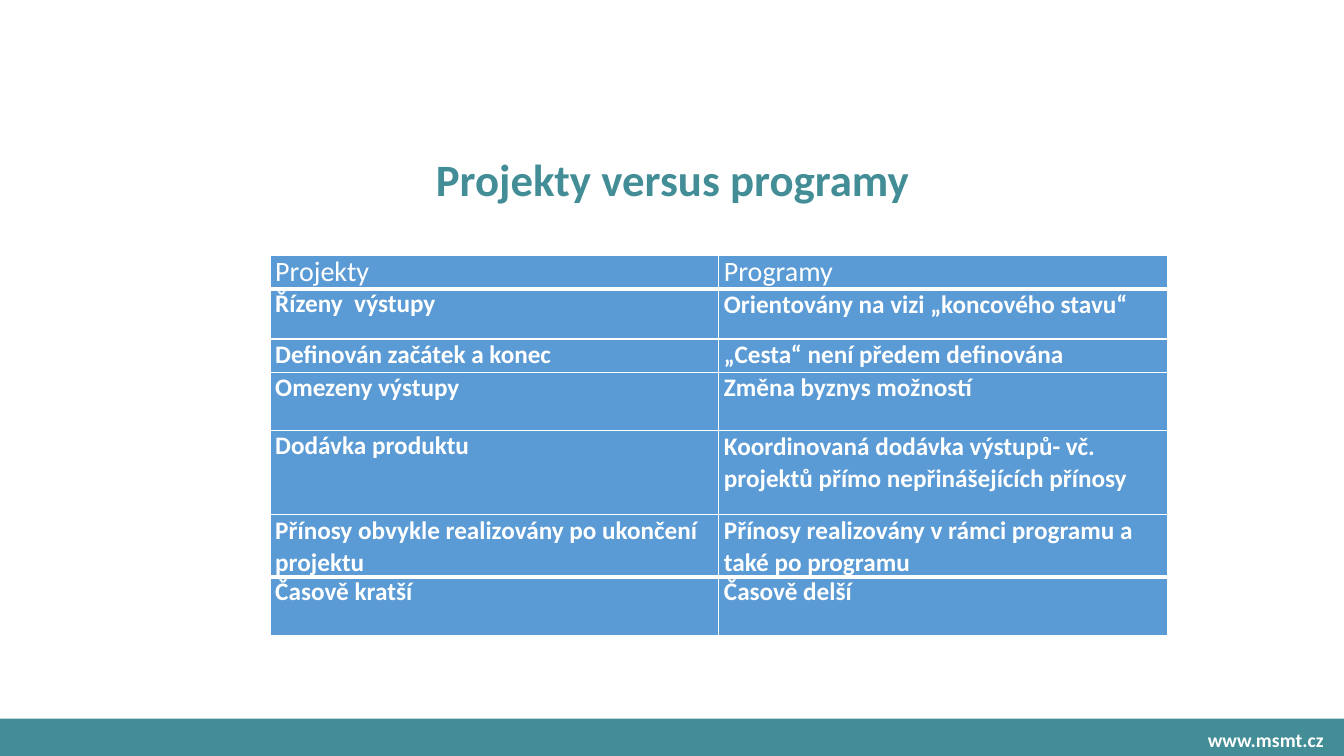
from lxml.etree import SubElement
from pptx import Presentation
from pptx.dml.color import RGBColor
from pptx.enum.shapes import MSO_SHAPE as Shape
from pptx.enum.text import MSO_ANCHOR as Anchor, PP_ALIGN as Align
from pptx.oxml.ns import qn
from pptx.util import Inches, Pt

TEAL = RGBColor(0x42, 0x8D, 0x96)
BLUE = RGBColor(0x5B, 0x9B, 0xD5)
WHITE = RGBColor(0xFF, 0xFF, 0xFF)
FONT = "Calibri"
LONG_TEXT = 35

COMPARISON = [
    ("Projekty", "Programy"),
    ("Řízeny  výstupy", "Orientovány na vizi „koncového stavu“"),
    ("Definován začátek a konec", "„Cesta“ není předem definována"),
    ("Omezeny výstupy", "Změna byznys možností"),
    ("Dodávka produktu",
     "Koordinovaná dodávka výstupů- vč. projektů přímo nepřinášejících přínosy"),
    ("Přínosy obvykle realizovány po ukončení projektu",
     "Přínosy realizovány v rámci programu a také po programu"),
    ("Časově kratší", "Časově delší"),
]
ROW_HEIGHTS = [0.29, 0.5, 0.33, 0.58, 0.83, 0.58, 0.58]


def write(frame, text, size, color=WHITE, bold=False, align=Align.LEFT, spacing=1.0):
    frame.word_wrap = True
    paragraph = frame.paragraphs[0]
    paragraph.alignment = align
    paragraph.line_spacing = spacing
    run = paragraph.add_run()
    run.text = text
    run.font.name = FONT
    run.font.size = Pt(size)
    run.font.bold = bold
    run.font.color.rgb = color


def add_borders(cell, top, bottom):
    properties = cell._tc.get_or_add_tcPr()
    for side, width in (("lnL", 1), ("lnR", 1), ("lnT", top), ("lnB", bottom)):
        line = SubElement(properties, qn(f"a:{side}"), w=str(Pt(width)))
        fill = SubElement(line, qn("a:solidFill"))
        SubElement(fill, qn("a:srgbClr"), val=str(WHITE))


def add_footer(slide, left, top, width, height):
    footer = slide.shapes.add_shape(
        Shape.RECTANGLE, Inches(left), Inches(top), Inches(width), Inches(height))
    footer.shadow.inherit = False
    footer.fill.solid()
    footer.fill.fore_color.rgb = TEAL
    footer.line.fill.background()
    frame = footer.text_frame
    frame.vertical_anchor = Anchor.MIDDLE
    frame.margin_top = Inches(0.05)
    frame.margin_bottom = 0
    frame.margin_right = Inches(0.2)
    write(frame, "www.msmt.cz", 14, bold=True, align=Align.RIGHT)


def add_title(slide, left, top, width, height):
    title = slide.shapes.add_textbox(
        Inches(left), Inches(top), Inches(width), Inches(height))
    title.text_frame.vertical_anchor = Anchor.MIDDLE
    write(title.text_frame, "Projekty versus programy", 32,
          color=TEAL, bold=True, align=Align.CENTER, spacing=0.9)


def add_comparison(slide, left, top, width, height):
    last = len(COMPARISON) - 1
    table = slide.shapes.add_table(
        len(COMPARISON), 2, Inches(left), Inches(top), Inches(width), Inches(height)).table
    for column in table.columns:
        column.width = Inches(width / 2)
    for r, (texts, row_height) in enumerate(zip(COMPARISON, ROW_HEIGHTS)):
        table.rows[r].height = Inches(row_height)
        header = r == 0
        for c, text in enumerate(texts):
            cell = table.cell(r, c)
            add_borders(cell, top=3 if r in (1, last) else 1,
                        bottom=3 if r in (0, last - 1) else 1)
            cell.fill.solid()
            cell.fill.fore_color.rgb = BLUE
            cell.margin_left = Inches(0.05)
            cell.margin_top = cell.margin_right = cell.margin_bottom = 0
            write(cell.text_frame, text, 20 if header else 18, bold=not header,
                  spacing=1.03 if len(text) > LONG_TEXT else 1.0)


def main():
    deck = Presentation()
    deck.slide_width = Inches(13.33)
    deck.slide_height = Inches(7.5)
    slide = deck.slides.add_slide(deck.slide_layouts[6])
    add_footer(slide, 0, 7.13, 13.33, 0.37)
    add_title(slide, 0.92, 1.08, 11.5, 1.45)
    add_comparison(slide, 2.68, 2.53, 8.9, sum(ROW_HEIGHTS))
    deck.save("out.pptx")


if __name__ == "__main__":
    main()
